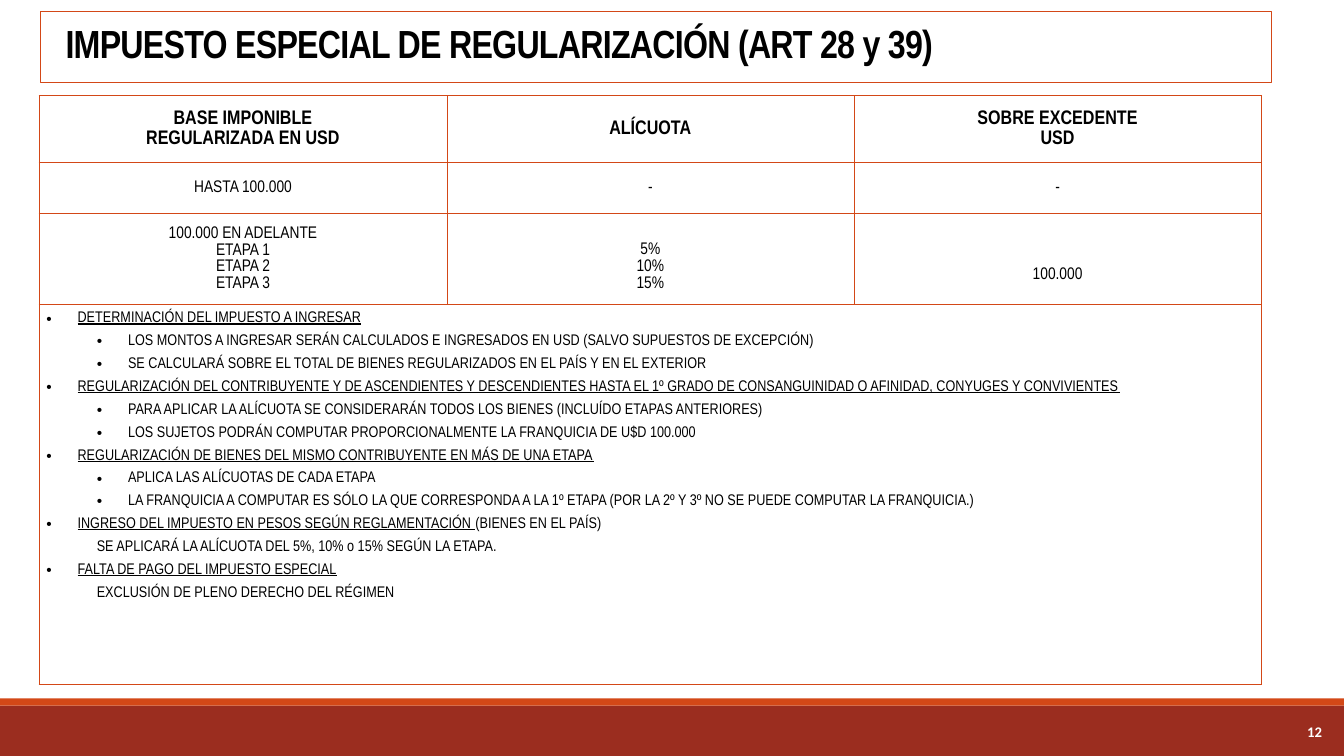
from lxml.etree import SubElement
from pptx import Presentation
from pptx.dml.color import RGBColor
from pptx.enum.shapes import MSO_SHAPE
from pptx.enum.text import MSO_ANCHOR, MSO_AUTO_SIZE, PP_ALIGN
from pptx.oxml.ns import qn
from pptx.util import Inches, Pt

ORANGE, DARK_RED, BLACK, WHITE = "D34817", "9B2D1F", "000000", "FFFFFF"
NARROW = "Arial Narrow"
TITLE = "IMPUESTO ESPECIAL DE REGULARIZACIÓN (ART 28 y 39)"
ROW_HEIGHTS = [0.66, 0.5, 0.91, 3.77]
COLUMN_WIDTH = 4.04
BLANK_LINE = 0.16

RATES = [
    [["BASE IMPONIBLE", "REGULARIZADA EN USD"], ["ALÍCUOTA"], ["SOBRE EXCEDENTE", "USD"]],
    [["HASTA 100.000"], ["-"], ["-"]],
    [["100.000 EN ADELANTE", "ETAPA 1", "ETAPA 2", "ETAPA 3"], ["5%", "10%", "15%"], ["100.000"]],
]
TOP_MARGINS = {(2, 1): BLANK_LINE, (2, 2): 2 * BLANK_LINE}

HEADING, POINT, NOTE = "heading", "point", "note"
INDENTS = {HEADING: (0.31, -0.31), POINT: (0.81, -0.31), NOTE: (0.5, 0)}
RULES = [
    (HEADING, "DETERMINACIÓN DEL IMPUESTO A INGRESAR", ""),
    (POINT, "", "LOS MONTOS A INGRESAR SERÁN CALCULADOS E INGRESADOS EN USD (SALVO SUPUESTOS DE EXCEPCIÓN)"),
    (POINT, "", "SE CALCULARÁ SOBRE EL TOTAL DE BIENES REGULARIZADOS EN EL PAÍS Y EN EL EXTERIOR"),
    (HEADING, "REGULARIZACIÓN DEL CONTRIBUYENTE Y DE ASCENDIENTES Y DESCENDIENTES HASTA EL 1º GRADO "
              "DE CONSANGUINIDAD O AFINIDAD, CONYUGES Y CONVIVIENTES", ""),
    (POINT, "", "PARA APLICAR LA ALÍCUOTA SE CONSIDERARÁN TODOS LOS BIENES (INCLUÍDO ETAPAS ANTERIORES)"),
    (POINT, "", "LOS SUJETOS PODRÁN COMPUTAR PROPORCIONALMENTE LA FRANQUICIA DE U$D 100.000"),
    (HEADING, "REGULARIZACIÓN DE BIENES DEL MISMO CONTRIBUYENTE EN MÁS DE UNA ETAPA", ""),
    (POINT, "", "APLICA LAS ALÍCUOTAS DE CADA ETAPA"),
    (POINT, "", "LA FRANQUICIA A COMPUTAR ES SÓLO LA QUE CORRESPONDA A LA 1º ETAPA "
                "(POR LA 2º Y 3º NO SE PUEDE COMPUTAR LA FRANQUICIA.)"),
    (HEADING, "INGRESO DEL IMPUESTO EN PESOS SEGÚN REGLAMENTACIÓN ", "(BIENES EN EL PAÍS)"),
    (NOTE, "", "SE APLICARÁ LA ALÍCUOTA DEL 5%, 10% o 15% SEGÚN LA ETAPA."),
    (HEADING, "FALTA DE PAGO DEL IMPUESTO ESPECIAL", ""),
    (NOTE, "", "EXCLUSIÓN DE PLENO DERECHO DEL RÉGIMEN"),
]


def color(value):
    """Turn a hex string into a colour."""
    return RGBColor.from_string(value)


def set_font(font, name, size, value, bold=False):
    """Format a font."""
    font.name, font.size, font.bold = name, Pt(size), bold
    font.color.rgb = color(value)


def place(shape, left, top, width, height):
    """Move and size a shape, in inches."""
    shape.left, shape.top = Inches(left), Inches(top)
    shape.width, shape.height = Inches(width), Inches(height)


def add_band(slide, top, height, fill):
    """Draw a full-width footer band."""
    band = slide.shapes.add_shape(MSO_SHAPE.RECTANGLE, 0, Inches(top), Inches(13.33), Inches(height))
    band.shadow.inherit = False
    band.fill.solid()
    band.fill.fore_color.rgb = color(fill)
    band.line.fill.background()


def format_title(title):
    """Fill and frame the title placeholder."""
    place(title, 0.4, 0.11, 12.21, 0.71)
    title.line.color.rgb = color(ORANGE)
    title.line.width = Pt(0.25)
    frame = title.text_frame
    frame.text = TITLE
    frame.auto_size = MSO_AUTO_SIZE.NONE
    frame.vertical_anchor = MSO_ANCHOR.MIDDLE
    frame.margin_left = frame.margin_right = Inches(0.25)
    frame.margin_top = frame.margin_bottom = Inches(0.25)
    paragraph = frame.paragraphs[0]
    paragraph.alignment = PP_ALIGN.LEFT
    paragraph.line_spacing = 0.85
    set_font(paragraph.font, NARROW, 28, BLACK, True)
    paragraph.runs[0]._r.get_or_add_rPr().set("spc", "-50")


def add_slide_number(slide, number):
    """Write the slide number on the footer band."""
    box = slide.shapes.add_textbox(Inches(11.78), Inches(7.06), Inches(1.43), Inches(0.4))
    frame = box.text_frame
    frame.word_wrap = True
    frame.vertical_anchor = MSO_ANCHOR.MIDDLE
    frame.text = number
    frame.paragraphs[0].alignment = PP_ALIGN.RIGHT
    set_font(frame.paragraphs[0].font, "Calibri", 10.5, WHITE, True)


def format_cell(cell, row, column):
    """Set the borders, fill and margins of a cell by its place in the table."""
    thick = {"lnL": column == 0, "lnR": column == 2, "lnT": row <= 1, "lnB": row in (0, 3)}
    properties = cell._tc.get_or_add_tcPr()
    for side, is_thick in thick.items():
        border = SubElement(properties, qn(f"a:{side}"), w=str(Pt(1 if is_thick else 0.25)))
        fill = SubElement(border, qn("a:solidFill"))
        SubElement(fill, qn("a:srgbClr"), val=ORANGE)
    cell.fill.background()
    cell.margin_left = cell.margin_right = Inches(0.07)
    cell.margin_top = Inches(TOP_MARGINS.get((row, column), 0))
    cell.margin_bottom = 0


def write_rate(cell, lines, is_header):
    """Write centred lines in a cell."""
    cell.vertical_anchor = MSO_ANCHOR.MIDDLE
    cell.text = "\n".join(lines)
    for paragraph in cell.text_frame.paragraphs:
        paragraph.alignment = PP_ALIGN.CENTER
        paragraph.line_spacing = 1.07
        set_font(paragraph.font, NARROW, 14 if is_header else 12, BLACK, is_header)


def write_rule(paragraph, kind, underlined, plain):
    """Write one line of the list of rules."""
    for text, underline in ((underlined, True), (plain, False)):
        if text:
            run = paragraph.add_run()
            run.text = text
            run.font.underline = underline
    set_font(paragraph.font, NARROW, 11, BLACK)
    paragraph.space_after = Pt(6)
    paragraph.level = 0 if kind == HEADING else 1
    margin, indent = INDENTS[kind]
    properties = paragraph._p.get_or_add_pPr()
    properties.set("marL", str(Inches(margin)))
    properties.set("indent", str(Inches(indent)))
    if kind != NOTE:
        bullet = properties.makeelement(qn("a:buChar"), {"char": "•"})
        bullet_font = properties.makeelement(qn("a:buFont"), {"typeface": "Arial"})
        default_run = properties.find(qn("a:defRPr"))
        default_run.addprevious(bullet_font)
        default_run.addprevious(bullet)


def add_tax_table(slide):
    """Build the table of rates with the rules in its merged last row."""
    frame = slide.shapes.add_table(len(ROW_HEIGHTS), 3, Inches(0.39), Inches(0.95),
                                   Inches(3 * COLUMN_WIDTH), Inches(sum(ROW_HEIGHTS)))
    table = frame.table
    table.first_row = table.horz_banding = False
    for column in table.columns:
        column.width = Inches(COLUMN_WIDTH)
    for row_index, height in enumerate(ROW_HEIGHTS):
        table.rows[row_index].height = Inches(height)
        for column_index in range(3):
            format_cell(table.cell(row_index, column_index), row_index, column_index)
    for row_index, row in enumerate(RATES):
        for column_index, lines in enumerate(row):
            write_rate(table.cell(row_index, column_index), lines, row_index == 0)
    rules_cell = table.cell(3, 0)
    rules_cell.merge(table.cell(3, 2))
    text_frame = rules_cell.text_frame
    for index, rule in enumerate(RULES):
        paragraph = text_frame.add_paragraph() if index else text_frame.paragraphs[0]
        write_rule(paragraph, *rule)
    text_frame.paragraphs[0].line_spacing = 1.5


def main():
    """Build the slide and save it."""
    presentation = Presentation()
    presentation.slide_width, presentation.slide_height = Inches(13.33), Inches(7.5)
    slide = presentation.slides.add_slide(presentation.slide_layouts[5])
    add_band(slide, 7, 0.5, DARK_RED)
    add_band(slide, 6.93, 0.07, ORANGE)
    format_title(slide.shapes.title)
    add_slide_number(slide, "12")
    add_tax_table(slide)
    presentation.save("out.pptx")


if __name__ == "__main__":
    main()
